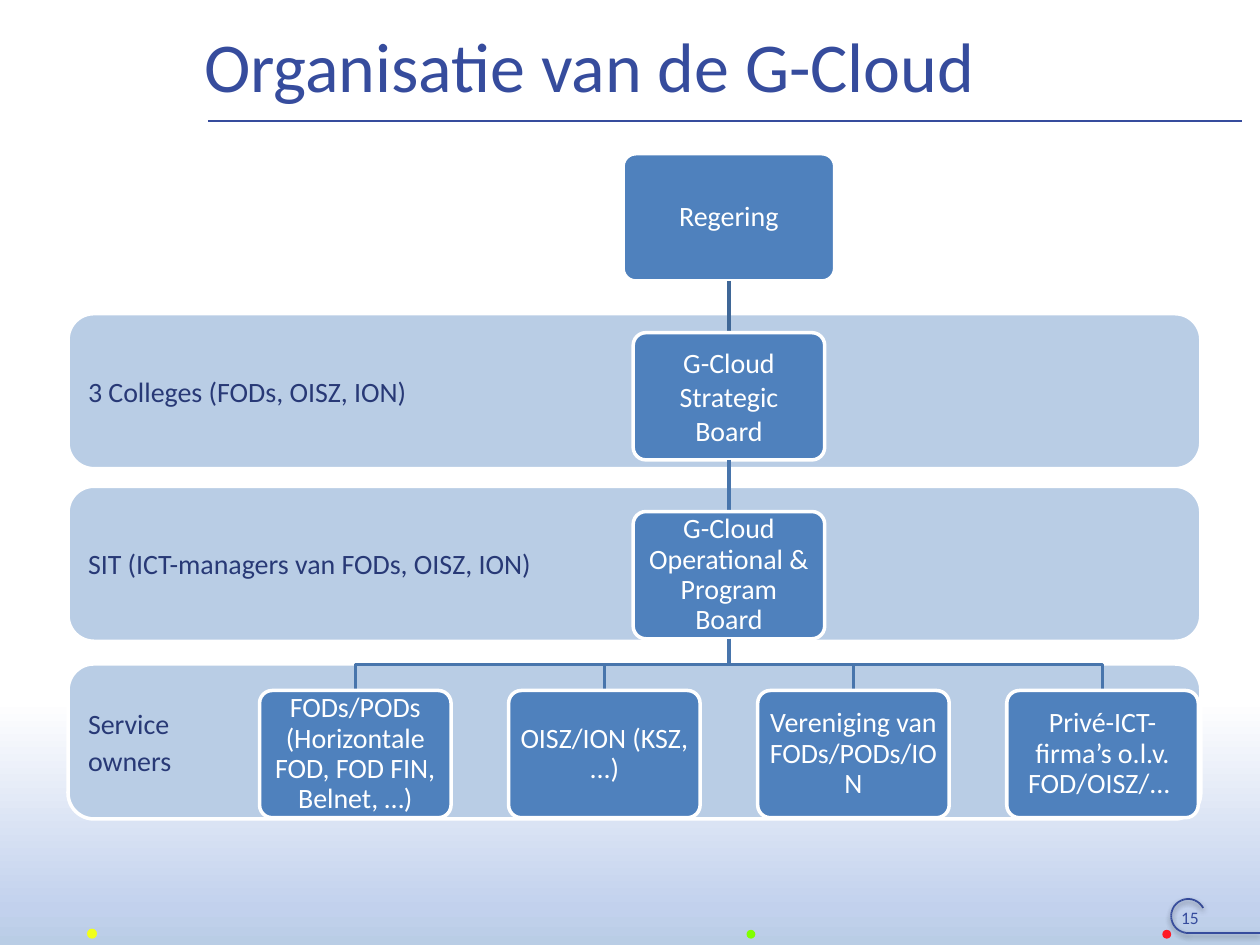
import itertools
import math
from dataclasses import dataclass

import pptx
import pptx.dml.color
import pptx.enum.shapes
import pptx.enum.text
import pptx.oxml
import pptx.oxml.ns
import pptx.util
from pptx.util import Inches

SHAPE = pptx.enum.shapes.MSO_SHAPE
STRAIGHT = pptx.enum.shapes.MSO_CONNECTOR.STRAIGHT
ALIGN = pptx.enum.text.PP_ALIGN
MIDDLE = pptx.enum.text.MSO_ANCHOR.MIDDLE
DRAWING = pptx.oxml.ns.nsdecls("a")
SOFT_SHADOW = (
    '<a:outerShdw blurRad="39370" dist="20320" dir="5400000" rotWithShape="0">'
    '<a:srgbClr val="000000"><a:alpha val="38000"/></a:srgbClr></a:outerShdw>')


@dataclass(frozen=True)
class Theme:
    font: str = "Calibri"
    title_size: int = 40
    body_size: int = 16
    number_size: int = 10
    line_width: float = 2
    accent: str = "364C9D"
    band: str = "B9CDE5"
    horizon: str = "C2D1ED"
    band_text: str = "283976"
    card: str = "4F81BD"
    top_link: str = "3F6797"
    link: str = "4875AC"
    white: str = "FFFFFF"
    yellow: str = "F2FF1A"
    green: str = "80FF00"
    red: str = "FF1A26"


THEME = Theme()


def rgb(value):
    return pptx.dml.color.RGBColor.from_string(value)


def set_line(item, color, width):
    item.line.color.rgb = rgb(color)
    item.line.width = pptx.util.Pt(width)


def write(item, text, size, color, align, spacing=1.0):
    frame = item.text_frame
    frame.word_wrap = True
    frame.text = text
    for para in frame.paragraphs:
        para.alignment = align
        para.line_spacing = spacing
        for span in para.runs:
            span.font.name = THEME.font
            span.font.size = pptx.util.Pt(size)
            span.font.color.rgb = rgb(color)
    return frame


def set_margins(frame, left, top, right, bottom):
    frame.margin_left, frame.margin_top = Inches(left), Inches(top)
    frame.margin_right, frame.margin_bottom = Inches(right), Inches(bottom)


def add_shape(page, kind, box, fill=None):
    shape = page.shapes.add_shape(kind, *map(Inches, box))
    shape.shadow.inherit = False
    if fill:
        shape.fill.solid()
        shape.fill.fore_color.rgb = rgb(fill)
    shape.line.fill.background()
    return shape


def add_line(page, start, end, color, width, effect=""):
    line = page.shapes.add_connector(STRAIGHT, *map(Inches, start + end))
    set_line(line, color, width)
    line._element.spPr.append(
        pptx.oxml.parse_xml(f"<a:effectLst {DRAWING}>{effect}</a:effectLst>"))
    return line


def add_polyline(page, points, color, width):
    (x, y), *rest = [(Inches(px), Inches(py)) for px, py in points]
    builder = page.shapes.build_freeform(x, y)
    builder.add_line_segments(rest, close=False)
    outline = builder.convert_to_shape()
    outline.shadow.inherit = False
    outline.fill.background()
    set_line(outline, color, width)


def add_backdrop(page, box):
    """Fade from blue at the bottom to white, with three dots on the lower edge."""
    left, top, width, height = box
    panel = add_shape(page, SHAPE.RECTANGLE, box)
    stops = "".join(
        f'<a:gs pos="{place * 1000}"><a:srgbClr val="{color}"/></a:gs>'
        for place, color in ((0, THEME.band), (15, THEME.horizon), (100, THEME.white)))
    gradient = pptx.oxml.parse_xml(
        f'<a:gradFill {DRAWING}><a:gsLst>{stops}</a:gsLst><a:lin ang="16200000"/></a:gradFill>')
    panel._element.spPr.find(pptx.oxml.ns.qn("a:prstGeom")).addnext(gradient)
    dots = ((0.73, 0.08, THEME.yellow), (5.96, 0.07, THEME.green), (9.26, 0.07, THEME.red))
    for center, size, color in dots:
        add_shape(page, SHAPE.OVAL,
                  (left + center - size / 2, top + height - 0.05 - size, size, size), color)


def add_title(page, box, text):
    left, top, width, height = box
    title = page.shapes.add_textbox(*map(Inches, box))
    frame = write(title, text, THEME.title_size, THEME.accent, ALIGN.LEFT)
    set_margins(frame, 0, 0.05, 0.1, 0.05)
    frame.vertical_anchor = MIDDLE
    rule = top + height + 0.09
    add_line(page, (left + 0.03, rule), (left + width, rule), THEME.accent, 1.5)


def add_page_number(page, box, number):
    """Number inside an open loop whose tail runs to the right edge of the slide."""
    left, top, width, height = box
    center_x, center_y, radius, steps = left + 0.28, top + 0.12, 0.135, 37
    first, last = math.radians(28), math.radians(270)
    angles = [first + (last - first) * step / steps for step in range(steps + 1)]
    loop = [(center_x + radius * math.cos(angle), center_y - radius * math.sin(angle))
            for angle in angles]
    loop.append((10, center_y + radius))
    for start, end in itertools.pairwise(loop):
        add_line(page, start, end, THEME.accent, 1, SOFT_SHADOW)
    label = page.shapes.add_textbox(*map(Inches, box))
    frame = write(label, number, THEME.number_size, THEME.accent, ALIGN.CENTER)
    set_margins(frame, 0.1, 0.05, 0.04, 0)


def add_band(page, box, text):
    band = add_shape(page, SHAPE.ROUNDED_RECTANGLE, box, THEME.band)
    set_line(band, THEME.white, THEME.line_width)
    frame = write(band, text, THEME.body_size, THEME.band_text, ALIGN.LEFT)
    frame.vertical_anchor = MIDDLE
    for para in frame.paragraphs[1:]:
        para.line_spacing = 1.1


def add_card(page, box, text, spacing=0.9):
    card = add_shape(page, SHAPE.ROUNDED_RECTANGLE, box, THEME.card)
    card.adjustments[0] = 0.1
    set_line(card, THEME.white, THEME.line_width)
    frame = write(card, text, THEME.body_size, THEME.white, ALIGN.CENTER, spacing)
    set_margins(frame, 0.06, 0.07, 0.06, 0.07)
    frame.vertical_anchor = MIDDLE
    return card


def add_organisation(page, box):
    """Chain of three cards, the last of which branches into a row of owners."""
    left, top, width, height = box
    card_width, card_height, gap = 1.52, 1.01, 0.41
    step = (width - card_width) / 3
    center = left + width / 2
    chain = (("Regering", 1.68, 0.9, None),
             ("G-Cloud Strategic Board", card_width, 1.0, THEME.top_link),
             ("G-Cloud Operational & Program Board", card_width, 0.9, THEME.link))
    above = None
    for level, (text, wide, spacing, color) in enumerate(chain):
        card_top = top + level * (card_height + gap)
        if above is not None:
            link = add_line(page, (center, card_top - gap), (center, card_top),
                            color, THEME.line_width)
        card = add_card(page, (center - wide / 2, card_top, wide, card_height), text, spacing)
        if above is not None:
            link.begin_connect(above, 2)
            link.end_connect(card, 0)
        above = card

    owners = ("FODs/PODs\v(Horizontale FOD, FOD FIN, Belnet, …)", "OISZ/ION (KSZ, ...)",
              "Vereniging van FODs/PODs/ION", "Privé-ICT-firma’s o.l.v. FOD/OISZ/... ")
    row_top = top + height - card_height
    start, bend = row_top - gap, row_top - gap / 2
    for index, text in enumerate(owners):
        card_left = left + index * step
        middle = card_left + card_width / 2
        add_polyline(page, ((center, start), (center, bend), (middle, bend), (middle, row_top)),
                     THEME.link, THEME.line_width)
        add_card(page, (card_left, row_top, card_width, card_height), text)


def main():
    deck = pptx.Presentation()
    deck.slide_width, deck.slide_height = Inches(10), Inches(7.5)
    page = deck.slides.add_slide(deck.slide_layouts[6])
    add_backdrop(page, (0, 5.56, 10, 1.94))
    bands = ((2.49, "3 Colleges (FODs, OISZ, ION)"),
             (3.86, "SIT (ICT-managers van FODs, OISZ, ION)"),
             (5.27, "Service\nowners"))
    for top, text in bands:
        add_band(page, (0.54, top, 8.99, 1.23), text)
    add_title(page, (1.62, 0.15, 8.24, 0.72), "Organisatie van de G-Cloud")
    add_organisation(page, (2.06, 1.22, 7.45, 5.27))
    add_page_number(page, (9.15, 7.15, 0.53, 0.24), "15")
    deck.save("out.pptx")


if __name__ == "__main__":
    main()
